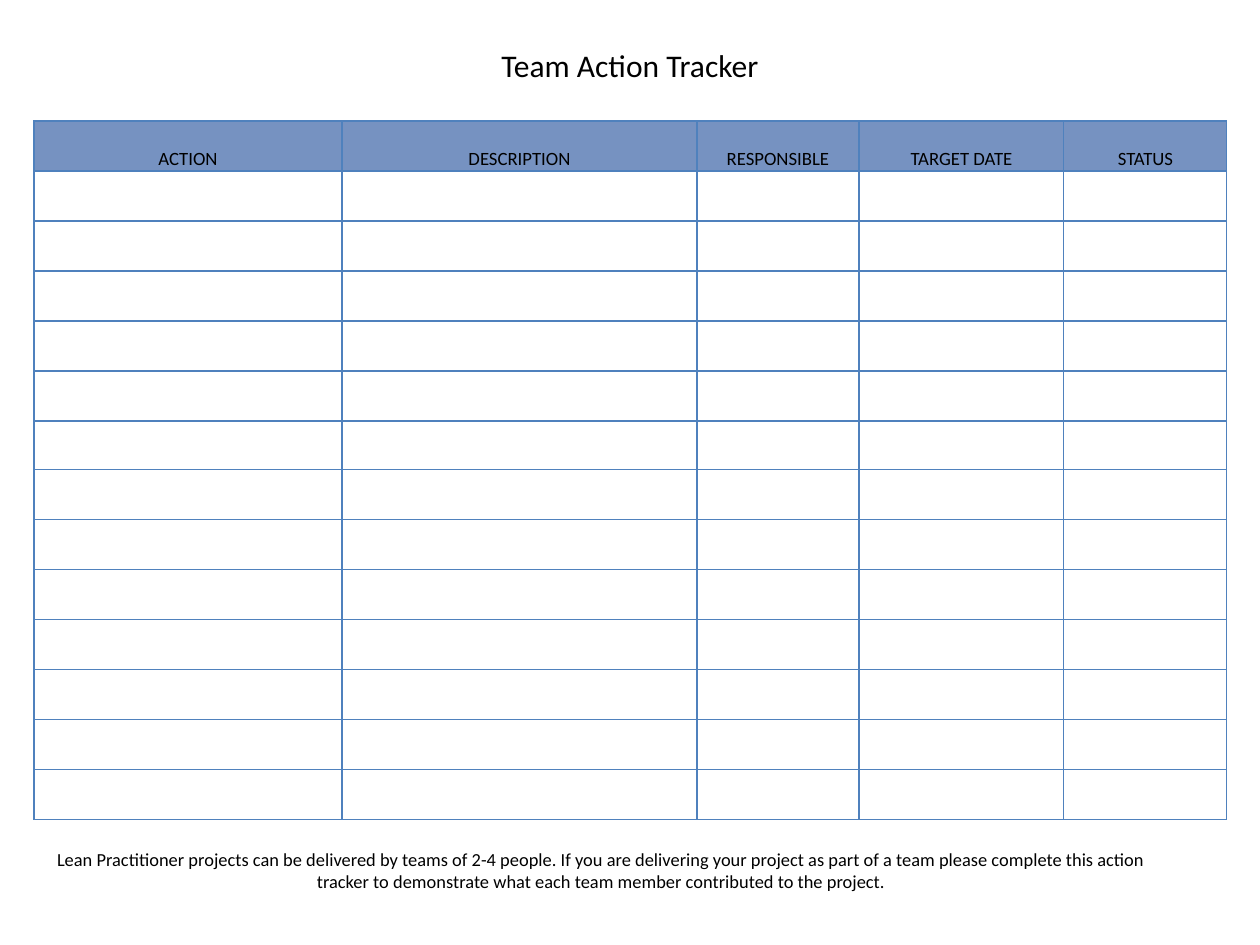
"""Build a one-page team action tracker with an empty grid to fill in."""
from lxml import etree
from pptx import Presentation
from pptx import util as u
from pptx.dml.color import RGBColor
from pptx.enum import text
from pptx.oxml import ns

PX = 10160
COLORS = {"ink": "000000", "header": "7692C1", "border": "4F81BD"}
HEADINGS = ["ACTION", "DESCRIPTION", "RESPONSIBLE", "TARGET DATE", "STATUS"]
COLUMN_WIDTHS = [308, 355, 162, 205, 163]
ROW_HEIGHTS = [50] * 6 + [49] + [50] * 7
TITLE = "Team Action Tracker"
NOTE = (
    "Lean Practitioner projects can be delivered by teams of 2-4 people. "
    "If you are delivering your project as part of a team please complete this "
    "action tracker to demonstrate what each team member contributed to the project."
)


def write(frame, words, size):
    para = frame.paragraphs[0]
    para.text = words
    para.alignment = text.PP_ALIGN.CENTER
    para.font.name = "Calibri"
    para.font.size = u.Pt(size)
    para.font.color.rgb = RGBColor.from_string(COLORS["ink"])


def add_borders(cell):
    properties = cell._tc.get_or_add_tcPr()
    for side in ("lnL", "lnR", "lnT", "lnB"):
        line = etree.SubElement(properties, ns.qn(f"a:{side}"), w=str(u.Pt(1)))
        fill = etree.SubElement(line, ns.qn("a:solidFill"))
        etree.SubElement(fill, ns.qn("a:srgbClr"), val=COLORS["border"])


deck = Presentation()
deck.slide_width = 1260 * PX
deck.slide_height = 945 * PX
page = deck.slides.add_slide(deck.slide_layouts[6])

for words, left, top, size in [(TITLE, 63, 38, 25.2), (NOTE, 34, 844, 14.7)]:
    box = page.shapes.add_textbox(left * PX, top * PX, 1134 * PX, 53 * PX)
    frame = box.text_frame
    frame.word_wrap = True
    frame.vertical_anchor = text.MSO_ANCHOR.MIDDLE
    frame.margin_left = frame.margin_right = 13 * PX
    frame.margin_top = frame.margin_bottom = 6 * PX
    write(frame, words, size)

table = page.shapes.add_table(
    len(ROW_HEIGHTS), len(HEADINGS), 34 * PX, 121 * PX,
    sum(COLUMN_WIDTHS) * PX, sum(ROW_HEIGHTS) * PX,
).table
table.horz_banding = False
for column, width in zip(table.columns, COLUMN_WIDTHS):
    column.width = width * PX
for row, height in zip(table.rows, ROW_HEIGHTS):
    row.height = height * PX
for cell in table.iter_cells():
    add_borders(cell)
    cell.fill.background()

for column, heading in enumerate(HEADINGS):
    cell = table.cell(0, column)
    cell.fill.solid()
    cell.fill.fore_color.rgb = RGBColor.from_string(COLORS["header"])
    cell.vertical_anchor = text.MSO_ANCHOR.BOTTOM
    cell.margin_left = cell.margin_right = cell.margin_top = 1 * PX
    cell.margin_bottom = 0
    write(cell.text_frame, heading, 15)
    cell.text_frame.paragraphs[0].font.bold = False

deck.save("out.pptx")
